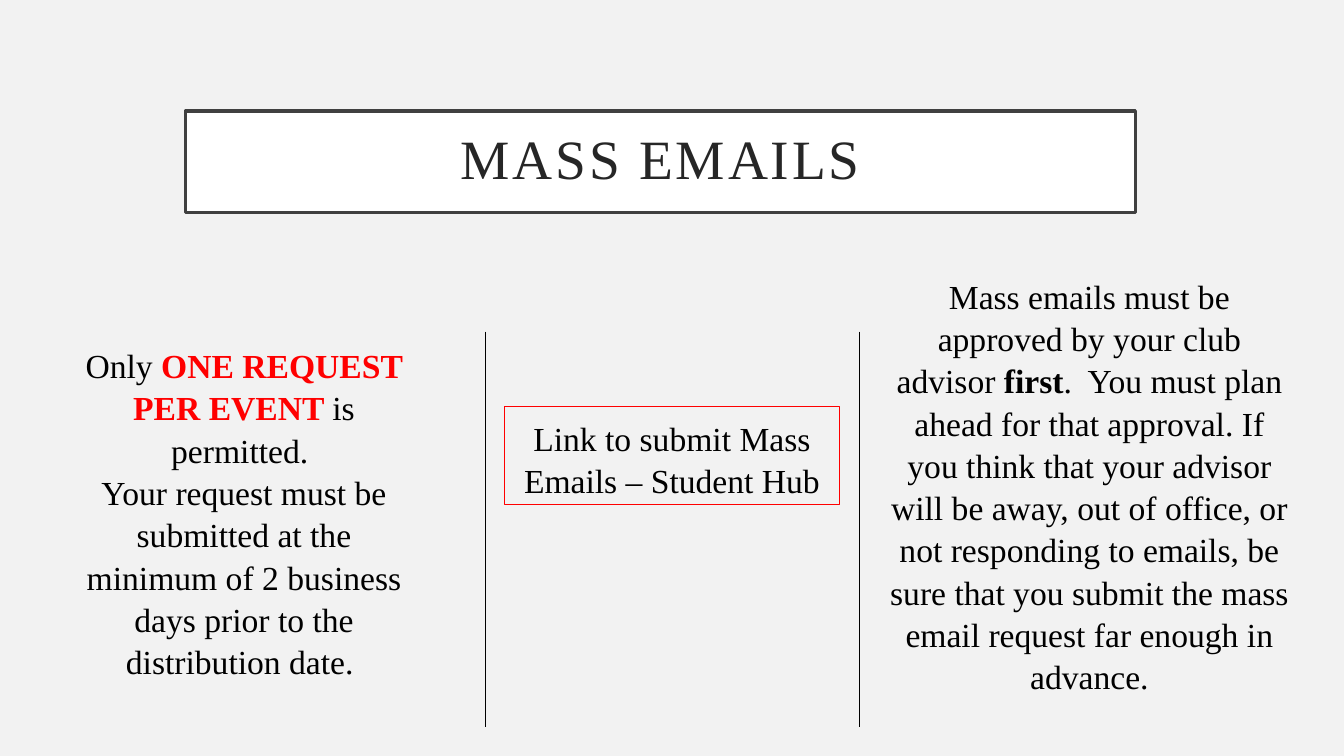
from pptx import Presentation
from pptx.dml.color import RGBColor
from pptx.enum.shapes import MSO_CONNECTOR, MSO_SHAPE
from pptx.enum.text import MSO_ANCHOR as ANCHOR, MSO_AUTO_SIZE, PP_ALIGN as ALIGN
from pptx.oxml.ns import qn
from pptx.util import Inches, Pt
from lxml import etree

# Content: each text is a list of lines, each line a list of (words, style)
TITLE = [[("MASS EMAILS", "title")]]
LINK = [[("Link to submit Mass Emails – Student Hub", "plain")]]
LIMIT = [
    [("Only ", "plain"), ("ONE REQUEST PER EVENT ", "alert"), ("is permitted. ", "plain")],
    [("Your request must be submitted at the minimum of 2 business days "
      "prior to the distribution date. ", "plain")],
]
APPROVAL = [[
    ("Mass emails must be approved by your club advisor ", "plain"),
    ("first", "strong"),
    (".  You must plan ahead for that approval. If you think that your advisor "
     "will be away, out of office, or not responding to emails, be sure that you "
     "submit the mass email request far enough in advance.", "plain"),
]]

# Look
FONT = "Times New Roman"
COLORS = {"bg": "F2F2F2", "panel": "FFFFFF", "frame": "404040",
          "title": "262626", "text": "000000", "alert": "FF0000"}
STYLES = {"title": ("title", False), "plain": ("text", False),
          "strong": ("text", True), "alert": ("alert", True)}

# Layout in inches: left, top, width, height
SLIDE_W, SLIDE_H = 13.33, 7.5
TITLE_BOX = (1.84, 1.1, 9.42, 1.01)
LINK_BOX = (5, 4.03, 3.33, 0.98)
TEXT_BOXES = [  # lines, box, bottom inset
    (LIMIT, (0.7, 2.8, 3.44, 4.41), 0.45),
    (APPROVAL, (8.69, 2.55, 4.23, 4.41), 0.05),
]
DIVIDERS_X = (4.81, 8.52)
DIVIDER_TOP, DIVIDER_BOTTOM = 3.29, 7.21


def color(name):
    return RGBColor.from_string(COLORS[name])


def inches(values):
    return [Inches(v) for v in values]


def write(shape, lines, size=24, spacing=1.05, anchor=ANCHOR.BOTTOM,
          insets=(0.1, 0.05, 0.1, 0.05), tracking=0):
    tf = shape.text_frame
    tf.word_wrap = True
    tf.auto_size = MSO_AUTO_SIZE.NONE
    tf.vertical_anchor = anchor
    tf.margin_left, tf.margin_top, tf.margin_right, tf.margin_bottom = inches(insets)
    p = tf.paragraphs[0]
    p.alignment = ALIGN.CENTER
    p.line_spacing = spacing
    for i, line in enumerate(lines):
        if i:
            p.add_line_break()
        for words, style in line:
            r = p.add_run()
            r.text = words
            tone, bold = STYLES[style]
            r.font.name, r.font.size, r.font.bold = FONT, Pt(size), bold
            r.font.color.rgb = color(tone)
            if tracking:
                r.font._element.set("spc", str(tracking * 100))


def outline(shape, name, width):
    shape.line.color.rgb = color(name)
    shape.line.width = Pt(width)


prs = Presentation()
prs.slide_width, prs.slide_height = inches((SLIDE_W, SLIDE_H))
s = prs.slides.add_slide(prs.slide_layouts[5])
s.background.fill.solid()
s.background.fill.fore_color.rgb = color("bg")

# Title panel
title = s.shapes.title
title.left, title.top, title.width, title.height = inches(TITLE_BOX)
title.fill.solid()
title.fill.fore_color.rgb = color("panel")
outline(title, "frame", 2.5)
write(title, TITLE, size=39.6, spacing=0.9, anchor=ANCHOR.MIDDLE,
      insets=(0.2,) * 4, tracking=2)

# Framed link in the middle column
link = s.shapes.add_shape(MSO_SHAPE.RECTANGLE, *inches(LINK_BOX))
link.shadow.inherit = False
link.fill.background()
outline(link, "alert", 0.75)
write(link, LINK)

# Left and right columns
for lines, box, bottom in TEXT_BOXES:
    write(s.shapes.add_textbox(*inches(box)), lines, insets=(0.1, 0.05, 0.1, bottom))

# Column dividers
for x in DIVIDERS_X:
    divider = s.shapes.add_connector(
        MSO_CONNECTOR.STRAIGHT, *inches((x, DIVIDER_TOP, x, DIVIDER_BOTTOM)))
    outline(divider, "text", 0.5)
    etree.SubElement(divider._element.spPr, qn("a:effectLst"))

prs.save("out.pptx")
